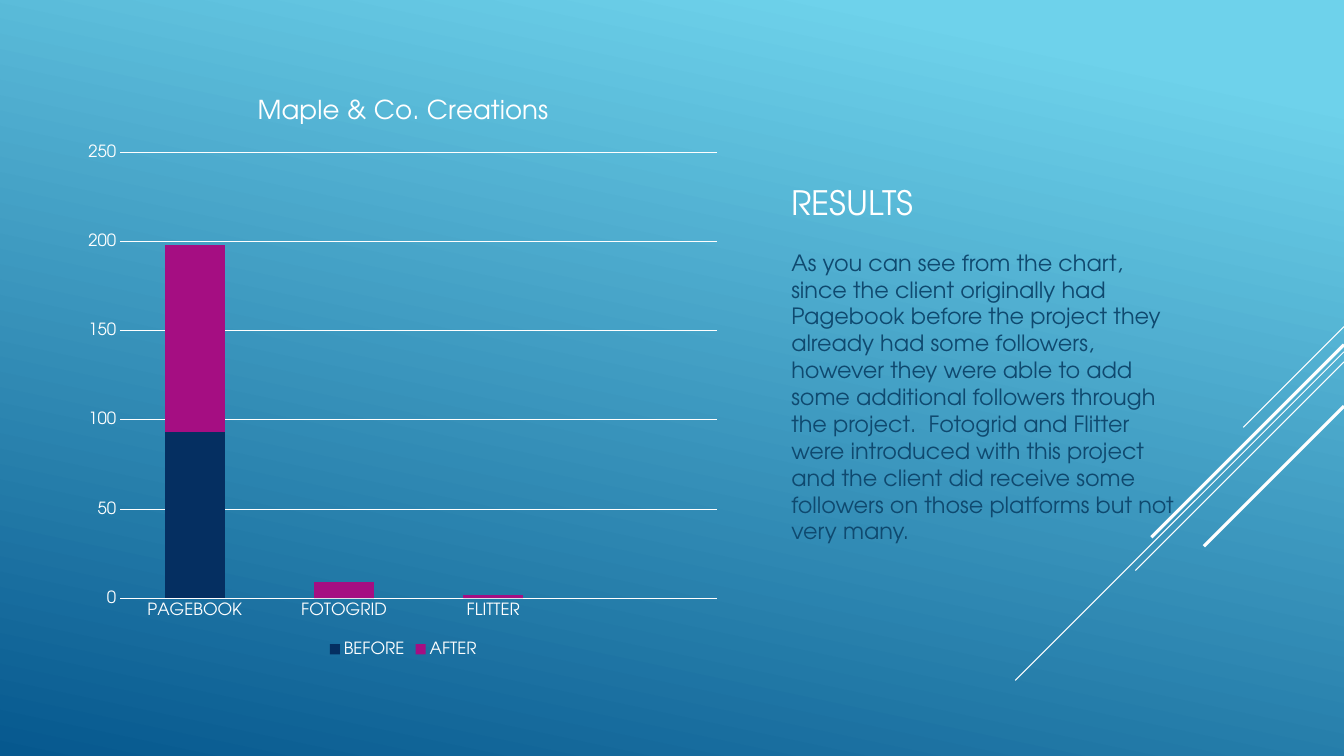
from lxml import etree
from pptx import Presentation
from pptx.chart.data import CategoryChartData
from pptx.dml.color import RGBColor
from pptx.enum.chart import XL_CHART_TYPE, XL_LEGEND_POSITION, XL_TICK_MARK
from pptx.enum.shapes import MSO_CONNECTOR
from pptx.enum.text import MSO_ANCHOR, PP_ALIGN
from pptx.oxml import parse_xml
from pptx.oxml.ns import nsdecls, qn
from pptx.util import Inches, Pt

FONT = "TeX Gyre Adventor"
COLORS = {
    "sky": "6ED2EB",
    "deep": "06588E",
    "white": "FFFFFF",
    "body": "0F496F",
    "before": "052F61",
    "after": "A50E82",
}


def color(name):
    return RGBColor.from_string(COLORS[name])


def write_text(text_frame, text, size, color_name="white", anchor=MSO_ANCHOR.TOP, space_after=0):
    text_frame.word_wrap = True
    text_frame.vertical_anchor = anchor
    paragraph = text_frame.paragraphs[0]
    paragraph.alignment = PP_ALIGN.LEFT
    paragraph.space_after = Pt(space_after)
    run = paragraph.add_run()
    run.text = text
    run.font.name = FONT
    run.font.size = Pt(size)
    run.font.bold = False
    run.font.color.rgb = color(color_name)


presentation = Presentation()
presentation.slide_width = Inches(13.33)
presentation.slide_height = Inches(7.5)
slide = presentation.slides.add_slide(presentation.slide_layouts[5])

# Background
background = slide.background.fill
background.gradient()
background.gradient_angle = 258
for stop, position, name in zip(background.gradient_stops, (0.1, 1), ("sky", "deep")):
    stop.position = position
    stop.color.rgb = color(name)

# Diagonal lines, all at 45 degrees from the right edge: top, length, width
for top, run_length, width in [
    (3.24, 1, 0.75),
    (3.49, 3.26, 0.75),
    (3.59, 2.07, 0.75),
    (3.42, 1.91, 2.25),
    (4.03, 1.39, 2.25),
]:
    line = slide.shapes.add_connector(
        MSO_CONNECTOR.STRAIGHT,
        Inches(13.33), Inches(top), Inches(13.33 - run_length), Inches(top + run_length),
    )
    line.line.color.rgb = color("white")
    line.line.width = Pt(width)
    etree.SubElement(line._element.spPr, qn("a:effectLst"))

# Title and explanation
title = slide.shapes.title
title.left, title.top = Inches(7.75), Inches(0.75)
title.width, title.height = Inches(4), Inches(1.5)
write_text(title.text_frame, "RESULTS", 24, anchor=MSO_ANCHOR.BOTTOM)

explanation = slide.shapes.add_textbox(Inches(7.75), Inches(2.42), Inches(4), Inches(3.4))
write_text(
    explanation.text_frame,
    "As you can see from the chart, since the client originally had Pagebook before the "
    "project they already had some followers, however they were able to add some additional "
    "followers through the project.  Fotogrid and Flitter were introduced with this project "
    "and the client did receive some followers on those platforms but not very many.",
    16, color_name="body", space_after=6,
)

# Followers chart, with an empty fourth category
chart_data = CategoryChartData()
chart_data.categories = ["PAGEBOOK", "FOTOGRID", "FLITTER", ""]
chart_data.add_series("BEFORE", (93, 0, 0, None))
chart_data.add_series("AFTER", (105, 9, 2, None))
chart = slide.shapes.add_chart(
    XL_CHART_TYPE.COLUMN_STACKED,
    Inches(0.75), Inches(0.75), Inches(6.5), Inches(5.81), chart_data,
).chart
chart.font.name = FONT
chart.font.size = Pt(12)
chart.font.color.rgb = color("white")

chart.has_title = True
write_text(chart.chart_title.text_frame, "Maple & Co. Creations", 18.6)
chart.chart_title.include_in_layout = False

chart.has_legend = True
chart.legend.position = XL_LEGEND_POSITION.BOTTOM
chart.legend.include_in_layout = False

plot = chart.plots[0]
plot.gap_width = 150
plot.overlap = 100
plot.vary_by_categories = False
for series, name in zip(plot.series, ("before", "after")):
    series.format.fill.solid()
    series.format.fill.fore_color.rgb = color(name)

category_axis, value_axis = chart.category_axis, chart.value_axis
for axis in (category_axis, value_axis):
    axis.major_tick_mark = XL_TICK_MARK.NONE
    axis.minor_tick_mark = XL_TICK_MARK.NONE
value_axis.minimum_scale = 0
value_axis.maximum_scale = 250
value_axis.major_unit = 50
value_axis.format.line.fill.background()
for line_format in (category_axis.format.line, value_axis.major_gridlines.format.line):
    line_format.color.rgb = color("white")
    line_format.width = Pt(0.75)

# Fixed inner plot area, as fractions of the chart
plot_area = chart._chartSpace.chart.plotArea
for layout in plot_area.findall(qn("c:layout")):
    plot_area.remove(layout)
plot_area.insert(0, parse_xml(
    f'<c:layout {nsdecls("c")}><c:manualLayout><c:layoutTarget val="inner"/>'
    '<c:xMode val="edge"/><c:yMode val="edge"/>'
    '<c:x val="0.068"/><c:y val="0.131"/><c:w val="0.911"/><c:h val="0.762"/>'
    '</c:manualLayout></c:layout>'
))

presentation.save("out.pptx")
